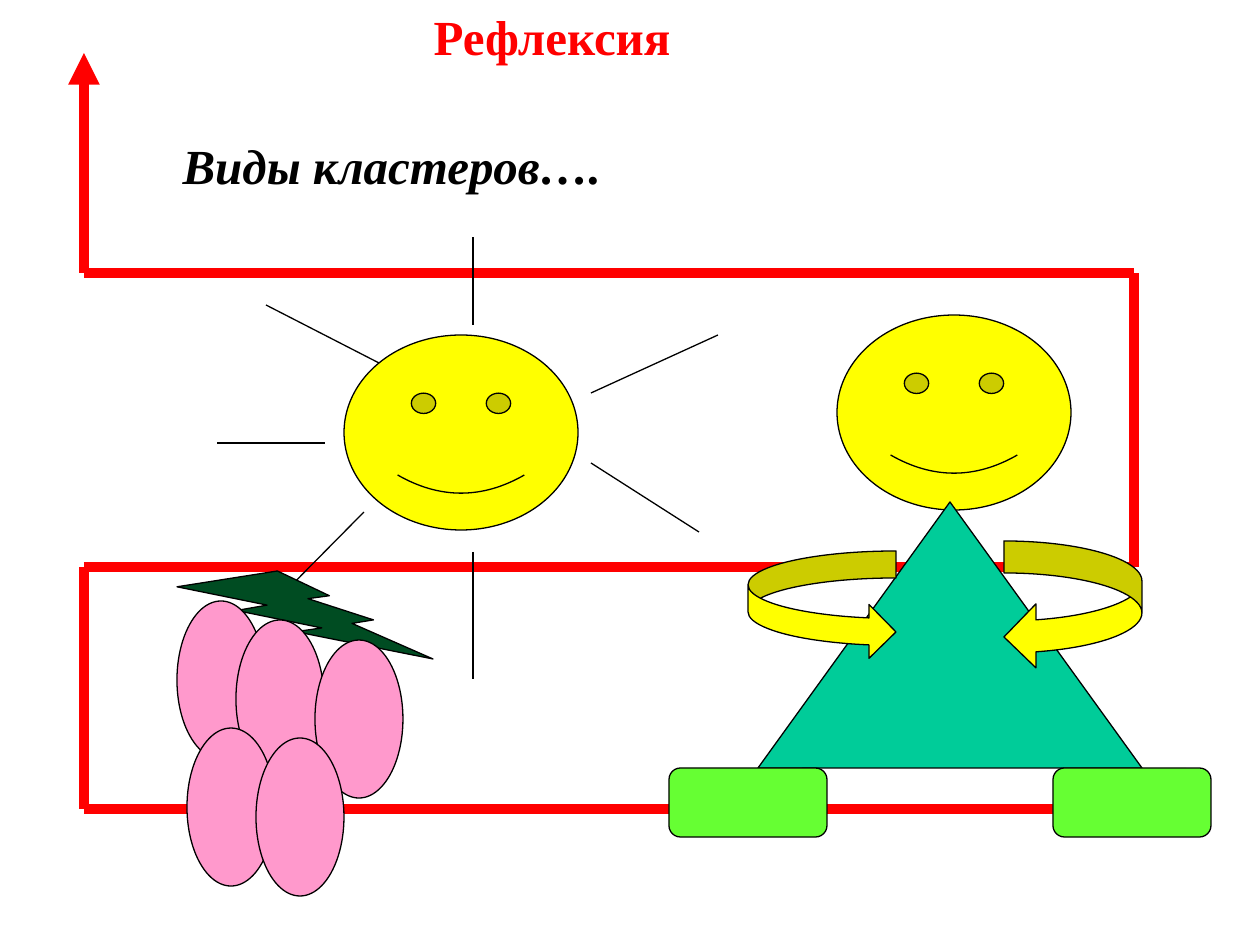
from itertools import pairwise

from lxml.etree import SubElement
from pptx import Presentation
from pptx.dml.color import RGBColor
from pptx.enum.shapes import MSO_CONNECTOR, MSO_SHAPE
from pptx.enum.text import MSO_ANCHOR, MSO_AUTO_SIZE, PP_ALIGN
from pptx.oxml.ns import qn
from pptx.util import Emu, Pt

PX_PER_INCH = 126
BLACK = RGBColor(0x00, 0x00, 0x00)
RED = RGBColor(0xFF, 0x00, 0x00)
YELLOW = RGBColor(0xFF, 0xFF, 0x00)
TEAL = RGBColor(0x00, 0xCC, 0x99)
LIME = RGBColor(0x66, 0xFF, 0x33)
LEAF = RGBColor(0x00, 0x4C, 0x22)
PINK = RGBColor(0xFF, 0x99, 0xCC)


def px(length):
    return Emu(round(length * 914400 / PX_PER_INCH))


class ClusterSlide:
    font_name = "Times New Roman"
    font_size = Pt(28)
    outline_width = 0.75

    def __init__(self, presentation):
        self.slide = presentation.slides.add_slide(presentation.slide_layouts[5])

    def set_text(self, shape, text, color, alignment, italic=False):
        frame = shape.text_frame
        frame.text = text
        frame.word_wrap = True
        frame.auto_size = MSO_AUTO_SIZE.SHAPE_TO_FIT_TEXT
        frame.vertical_anchor = MSO_ANCHOR.TOP
        paragraph = frame.paragraphs[0]
        paragraph.alignment = alignment
        font = paragraph.runs[0].font
        font.name, font.size = self.font_name, self.font_size
        font.bold, font.italic = True, italic
        font.color.rgb = color

    def title(self, text, left, top, width, height):
        shape = self.slide.shapes.title
        shape.left, shape.top = px(left), px(top)
        shape.width, shape.height = px(width), px(height)
        self.set_text(shape, text, RED, PP_ALIGN.CENTER)

    def text(self, text, left, top, width, height):
        shape = self.slide.shapes.add_textbox(px(left), px(top), px(width), px(height))
        self.set_text(shape, text, BLACK, PP_ALIGN.LEFT, italic=True)

    def shape(self, kind, fill, left, top, width, height):
        shape = self.slide.shapes.add_shape(kind, px(left), px(top), px(width), px(height))
        shape.shadow.inherit = False
        shape.fill.solid()
        shape.fill.fore_color.rgb = fill
        shape.line.color.rgb = BLACK
        shape.line.width = Pt(self.outline_width)

    def line(self, start, end, color=BLACK, width=outline_width, arrow=False):
        connector = self.slide.shapes.add_connector(
            MSO_CONNECTOR.STRAIGHT, *map(px, start), *map(px, end))
        connector.line.color.rgb = color
        connector.line.width = Pt(width)
        properties = connector.element.spPr
        if arrow:
            SubElement(properties.find(qn("a:ln")), qn("a:tailEnd"), type="triangle")
        SubElement(properties, qn("a:effectLst"))


def main():
    presentation = Presentation()
    presentation.slide_width, presentation.slide_height = px(1260), px(945)
    slide = ClusterSlide(presentation)
    slide.title(" Рефлексия", 263, 0, 566, 72)

    # Red winding path, ending in an arrow
    path = [(1134, 809), (84, 809), (84, 567), (1134, 567),
            (1134, 273), (84, 273), (84, 53)]
    for start, end in pairwise(path):
        slide.line(start, end, RED, 6, arrow=end == path[-1])

    slide.text(" Виды кластеров….", 158, 129, 1101, 72)

    # Sun with rays
    slide.shape(MSO_SHAPE.SMILEY_FACE, YELLOW, 344, 335, 234, 195)
    rays = [((591, 393), (718, 335)), ((591, 463), (699, 532)),
            ((473, 552), (473, 679)), ((364, 512), (276, 601)),
            ((325, 443), (217, 443)), ((379, 363), (266, 305)),
            ((473, 325), (473, 237))]
    for start, end in rays:
        slide.line(start, end)

    # Little person: head, body, arms, feet
    slide.shape(MSO_SHAPE.SMILEY_FACE, YELLOW, 837, 315, 234, 195)
    slide.shape(MSO_SHAPE.ISOSCELES_TRIANGLE, TEAL, 758, 502, 384, 266)
    slide.shape(MSO_SHAPE.CURVED_RIGHT_ARROW, YELLOW, 748, 551, 148, 108)
    slide.shape(MSO_SHAPE.CURVED_LEFT_ARROW, YELLOW, 1004, 541, 138, 128)
    for left in (669, 1053):
        slide.shape(MSO_SHAPE.ROUNDED_RECTANGLE, LIME, left, 768, 158, 69)

    # Bunch of grapes with a leaf
    slide.shape(MSO_SHAPE.LIGHTNING_BOLT, LEAF, 177, 571, 256, 88)
    for left, top in [(177, 601), (236, 620), (315, 640), (187, 728), (256, 738)]:
        slide.shape(MSO_SHAPE.OVAL, PINK, left, top, 88, 158)

    presentation.save("out.pptx")


if __name__ == "__main__":
    main()
